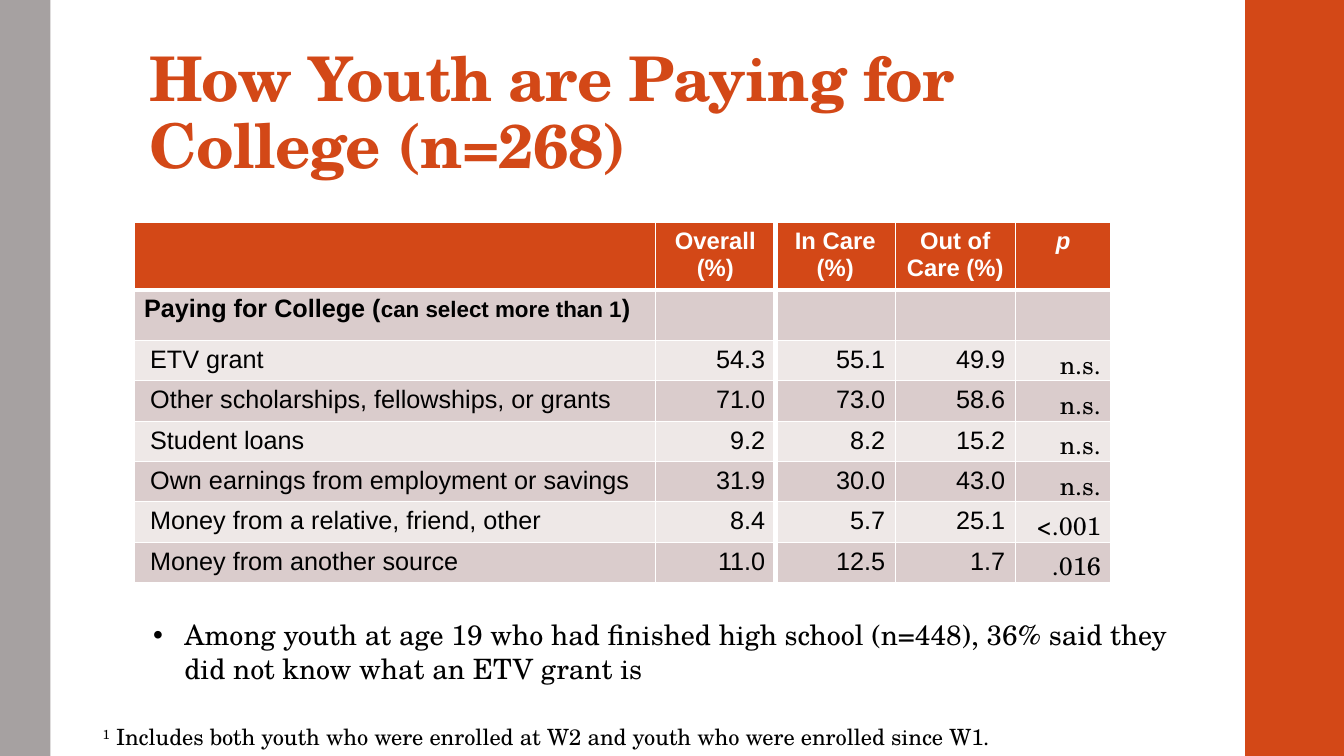
from dataclasses import dataclass

from lxml import etree
from pptx import Presentation
from pptx.dml.color import RGBColor
from pptx.enum.shapes import MSO_SHAPE as Preset
from pptx.enum.text import MSO_ANCHOR as Anchor, PP_ALIGN as Align
from pptx.oxml.ns import qn
from pptx.util import Inches, Pt


@dataclass(frozen=True)
class Theme:
    """Colours, fonts and type sizes of the slide."""
    accent: str = "D34817"
    side: str = "A6A1A1"
    dark_band: str = "DACCCC"
    light_band: str = "EEE8E7"
    white: str = "FFFFFF"
    black: str = "000000"
    serif: str = "TeX Gyre Schola"
    sans: str = "Arial"
    title: int = 44
    bullet: int = 20
    body: int = 18
    header: int = 17
    small: int = 16


THEME = Theme()
COLUMN_WIDTHS = (5.17, 1.19, 1.19, 1.19, 0.95)
ROW_HEIGHTS = (0.65, 0.5) + (0.4,) * 6
HEADERS = ("", "Overall (%)", "In Care (%)", "Out of Care (%)", "p")
SECTION = (
    ("Paying for College (", THEME.body),
    ("can select more than 1", THEME.small),
    (")", THEME.body),
)
SOURCES = (
    ("ETV grant", "54.3", "55.1", "49.9", "n.s."),
    ("Other scholarships, fellowships, or grants", "71.0", "73.0", "58.6", "n.s."),
    ("Student loans", "9.2", "8.2", "15.2", "n.s."),
    ("Own earnings from employment or savings", "31.9", "30.0", "43.0", "n.s."),
    ("Money from a relative, friend, other", "8.4", "5.7", "25.1", "<.001"),
    ("Money from another source", "11.0", "12.5", "1.7", ".016"),
)


def add_bar(page, left, width, colour):
    """Draw a full-height bar at a slide edge."""
    bar = page.shapes.add_shape(Preset.RECTANGLE, Inches(left), 0, Inches(width), Inches(7.5))
    bar.shadow.inherit = False
    bar.fill.solid()
    bar.fill.fore_color.rgb = RGBColor.from_string(colour)
    bar.line.fill.background()


def add_span(para, text, size, colour=THEME.black, font=THEME.serif, bold=False):
    """Append a formatted run to a paragraph."""
    span = para.add_run()
    span.text = text
    span.font.size = Pt(size)
    span.font.name = font
    span.font.bold = bold
    span.font.color.rgb = RGBColor.from_string(colour)
    return span


def add_text_box(page, left, top, width, height):
    """Add a wrapping text box and return its text frame."""
    box = page.shapes.add_textbox(Inches(left), Inches(top), Inches(width), Inches(height))
    box.text_frame.word_wrap = True
    return box.text_frame


def add_title(page, text):
    """Add the slide title."""
    frame = add_text_box(page, 1.38, 0.32, 10.6, 1.53)
    frame.vertical_anchor = Anchor.BOTTOM
    frame.margin_top = Inches(0.03)
    para = frame.paragraphs[0]
    para.line_spacing = 0.9
    span = add_span(para, text, THEME.title, THEME.accent, bold=True)
    span.font._element.set("spc", "-50")


def add_bullet(page, text):
    """Add the bulleted remark below the table."""
    para = add_text_box(page, 1.42, 6.08, 10.72, 0.77).paragraphs[0]
    add_span(para, text, THEME.bullet)
    properties = para._p.get_or_add_pPr()
    properties.set("marL", str(Inches(0.31)))
    properties.set("indent", str(-Inches(0.31)))
    etree.SubElement(properties, qn("a:buFont"), typeface=THEME.sans)
    etree.SubElement(properties, qn("a:buChar"), char="•")


def add_footnote(page, mark, text):
    """Add the footnote with its raised mark."""
    para = add_text_box(page, 0.92, 7.13, 10.53, 0.37).paragraphs[0]
    add_span(para, mark, THEME.small).font._element.set("baseline", "30000")
    add_span(para, text, THEME.small)


def style_cell(cell, colour, row, column):
    """Fill a cell and draw its white borders."""
    cell.fill.solid()
    cell.fill.fore_color.rgb = RGBColor.from_string(colour)
    widths = {
        "L": 4.5 if column == 2 else 1,
        "R": 4.5 if column == 1 else 1,
        "T": 3 if row == 1 else 1,
        "B": 3 if row == 0 else 1,
    }
    properties = cell._tc.get_or_add_tcPr()
    for index, (side, width) in enumerate(widths.items()):
        border = etree.Element(qn(f"a:ln{side}"), w=str(Pt(width)))
        fill = etree.SubElement(border, qn("a:solidFill"))
        etree.SubElement(fill, qn("a:srgbClr"), val=THEME.white)
        properties.insert(index, border)


def fill_header(table):
    """Write the column headings."""
    for column, text in enumerate(HEADERS):
        if text:
            para = table.cell(0, column).text_frame.paragraphs[0]
            para.alignment = Align.CENTER
            span = add_span(para, text, THEME.header, THEME.white, THEME.sans, bold=True)
            span.font.italic = text == "p"


def fill_sources(table):
    """Write one row for each source of money."""
    for row, values in enumerate(SOURCES, start=2):
        for column, text in enumerate(values):
            para = table.cell(row, column).text_frame.paragraphs[0]
            font = THEME.serif if column == 4 else THEME.sans
            add_span(para, text, THEME.body, font=font)
            if column:
                para.alignment = Align.RIGHT
            else:
                para._p.get_or_add_pPr().set("marL", str(Inches(0.06)))


def add_payment_table(page):
    """Add the table of payment sources."""
    rows, columns = len(ROW_HEIGHTS), len(COLUMN_WIDTHS)
    table = page.shapes.add_table(
        rows, columns, Inches(1.33), Inches(2.21),
        Inches(sum(COLUMN_WIDTHS)), Inches(sum(ROW_HEIGHTS))).table
    for column, width in zip(table.columns, COLUMN_WIDTHS):
        column.width = Inches(width)
    for row, height in enumerate(ROW_HEIGHTS):
        table.rows[row].height = Inches(height)
        band = THEME.dark_band if row % 2 else THEME.light_band
        for column in range(columns):
            style_cell(table.cell(row, column), band if row else THEME.accent, row, column)
    fill_header(table)
    for text, size in SECTION:
        add_span(table.cell(1, 0).text_frame.paragraphs[0], text, size, font=THEME.sans, bold=True)
    fill_sources(table)


def main():
    """Build and save the slide."""
    deck = Presentation()
    deck.slide_width, deck.slide_height = Inches(13.33), Inches(7.5)
    page = deck.slides.add_slide(deck.slide_layouts[6])
    add_bar(page, 12.35, 0.98, THEME.accent)
    add_bar(page, 0, 0.5, THEME.side)
    add_title(page, "How Youth are Paying for College (n=268)")
    add_payment_table(page)
    add_footnote(page, "1", " Includes both youth who were enrolled at W2 and youth "
                 "who were enrolled since W1.")
    add_bullet(page, "Among youth at age 19 who had finished high school (n=448), "
               "36% said they did not know what an ETV grant is")
    deck.save("out.pptx")


if __name__ == "__main__":
    main()
